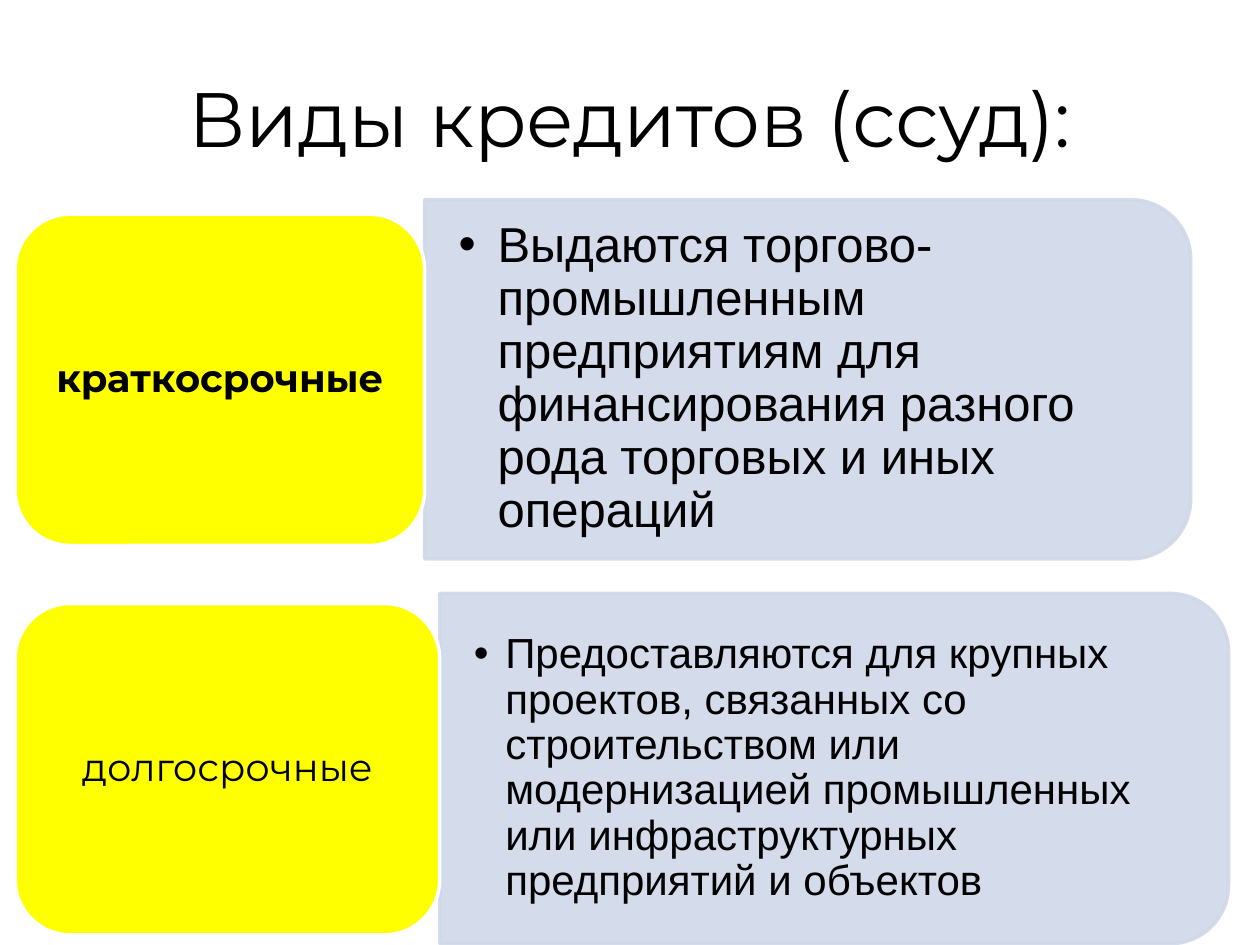
from dataclasses import dataclass

from lxml.etree import SubElement
from pptx import Presentation
from pptx.dml.color import RGBColor
from pptx.enum.shapes import MSO_SHAPE as Shape
from pptx.enum.text import MSO_ANCHOR as Anchor, PP_ALIGN as Align
from pptx.oxml.ns import qn
from pptx.util import Emu, Pt

PX = 9144  # EMU per px: 100 px to the inch


@dataclass(frozen=True)
class Theme:
    text: str = "000000"
    label: str = "FFFF00"
    edge: str = "FFFFFF"
    panel: str = "D0D8E8"
    panel_alpha: int = 90
    line_pt: int = 2
    heading_font: str = "Montserrat"
    body_font: str = "Arial"
    title_pt: int = 44
    label_pt: int = 22


THEME = Theme()

LEFT = 12
LABEL_H = 263
LABEL_PAD = 13


@dataclass(frozen=True)
class Loan:
    name: str
    bold: bool
    text: str
    text_pt: int
    hang: int
    label_top: int
    label_w: int
    panel_w: int
    panel_h: int


LOANS = [
    Loan("краткосрочные", True,
         "Выдаются торгово-промышленным предприятиям для "
         "финансирования разного рода торговых и иных операций",
         28, 31, 170, 325, 608, 285),
    Loan("долгосрочные", False,
         "Предоставляются для крупных проектов, связанных со строительством "
         "или модернизацией промышленных или инфраструктурных предприятий "
         "и объектов",
         24, 25, 479, 337, 626, 278),
]


def px(n):
    return Emu(round(n * PX))


def box(left, top, width, height):
    return [px(n) for n in (left, top, width, height)]


def add_run(p, text, font, size, bold=False):
    r = p.add_run()
    r.text = text
    r.font.name, r.font.size, r.font.bold = font, Pt(size), bold
    r.font.color.rgb = RGBColor.from_string(THEME.text)


def set_alpha(fill_format, percent):
    color = fill_format._xPr.find(qn("a:solidFill"))[0]
    SubElement(color, qn("a:alpha"), val=str(percent * 1000))


def add_block(shapes, kind, place, fill, line, alpha=None):
    s = shapes.add_shape(kind, *place)
    s.shadow.inherit = False
    s.fill.solid()
    s.fill.fore_color.rgb = RGBColor.from_string(fill)
    s.line.color.rgb = RGBColor.from_string(line)
    s.line.width = Pt(THEME.line_pt)
    if alpha is not None:
        set_alpha(s.fill, alpha)
        set_alpha(s.line.fill, alpha)
    return s


def add_text_box(shapes, place, inset_x, inset_y, space_after):
    """Add a wrapped, vertically centred box; return its paragraph."""
    tf = shapes.add_textbox(*place).text_frame
    tf.word_wrap = True
    tf.vertical_anchor = Anchor.MIDDLE
    tf.margin_left = tf.margin_right = px(inset_x)
    tf.margin_top = tf.margin_bottom = px(inset_y)
    p = tf.paragraphs[0]
    p.line_spacing = 0.9
    p.space_after = Pt(space_after)
    return p


def set_bullet(p, hang):
    pPr = p._p.get_or_add_pPr()
    pPr.set("marL", str(px(hang)))
    pPr.set("indent", str(px(-hang)))
    SubElement(pPr, qn("a:buFont"), typeface=THEME.body_font)
    SubElement(pPr, qn("a:buChar"), char="•")


def add_title(slide, text):
    s = slide.shapes.title
    s.left, s.top, s.width, s.height = box(50, 30, 900, 125)
    tf = s.text_frame
    tf.vertical_anchor = Anchor.MIDDLE
    p = tf.paragraphs[0]
    p.alignment = Align.CENTER
    add_run(p, text, THEME.heading_font, THEME.title_pt)


def add_panel(shapes, loan):
    left = LEFT + loan.label_w
    mid_x = left + loan.panel_w / 2
    mid_y = loan.label_top + LABEL_H / 2 - 0.5
    w, h = loan.panel_h, loan.panel_w  # swapped by the quarter turn
    s = add_block(shapes, Shape.ROUND_2_SAME_RECTANGLE,
                  box(mid_x - w / 2, mid_y - h / 2, w, h),
                  THEME.panel, THEME.panel, THEME.panel_alpha)
    s.rotation = 90

    # The text keeps clear of the rounded corners
    inset = 14
    p = add_text_box(shapes, box(left, mid_y - loan.panel_h / 2 + inset,
                                 loan.panel_w - inset,
                                 loan.panel_h - 2 * inset),
                     27, 14, loan.text_pt * 0.15)
    set_bullet(p, loan.hang)
    add_run(p, loan.text, THEME.body_font, loan.text_pt)


def add_label(shapes, loan):
    add_block(shapes, Shape.ROUNDED_RECTANGLE,
              box(LEFT, loan.label_top, loan.label_w, LABEL_H),
              THEME.label, THEME.edge)
    p = add_text_box(shapes, box(LEFT + LABEL_PAD, loan.label_top + LABEL_PAD,
                                 loan.label_w - 2 * LABEL_PAD,
                                 LABEL_H - 2 * LABEL_PAD),
                     9, 5, THEME.label_pt * 0.35)
    p.alignment = Align.CENTER
    add_run(p, loan.name, THEME.heading_font, THEME.label_pt, loan.bold)


def main():
    prs = Presentation()
    prs.slide_width, prs.slide_height = px(1000), px(750)
    slide = prs.slides.add_slide(prs.slide_layouts[5])
    add_title(slide, "Виды кредитов (ссуд):")

    # One row per kind of loan: panel behind, label in front
    group = slide.shapes.add_group_shape()
    for loan in LOANS:
        add_panel(group.shapes, loan)
        add_label(group.shapes, loan)
    prs.save("out.pptx")


if __name__ == "__main__":
    main()
